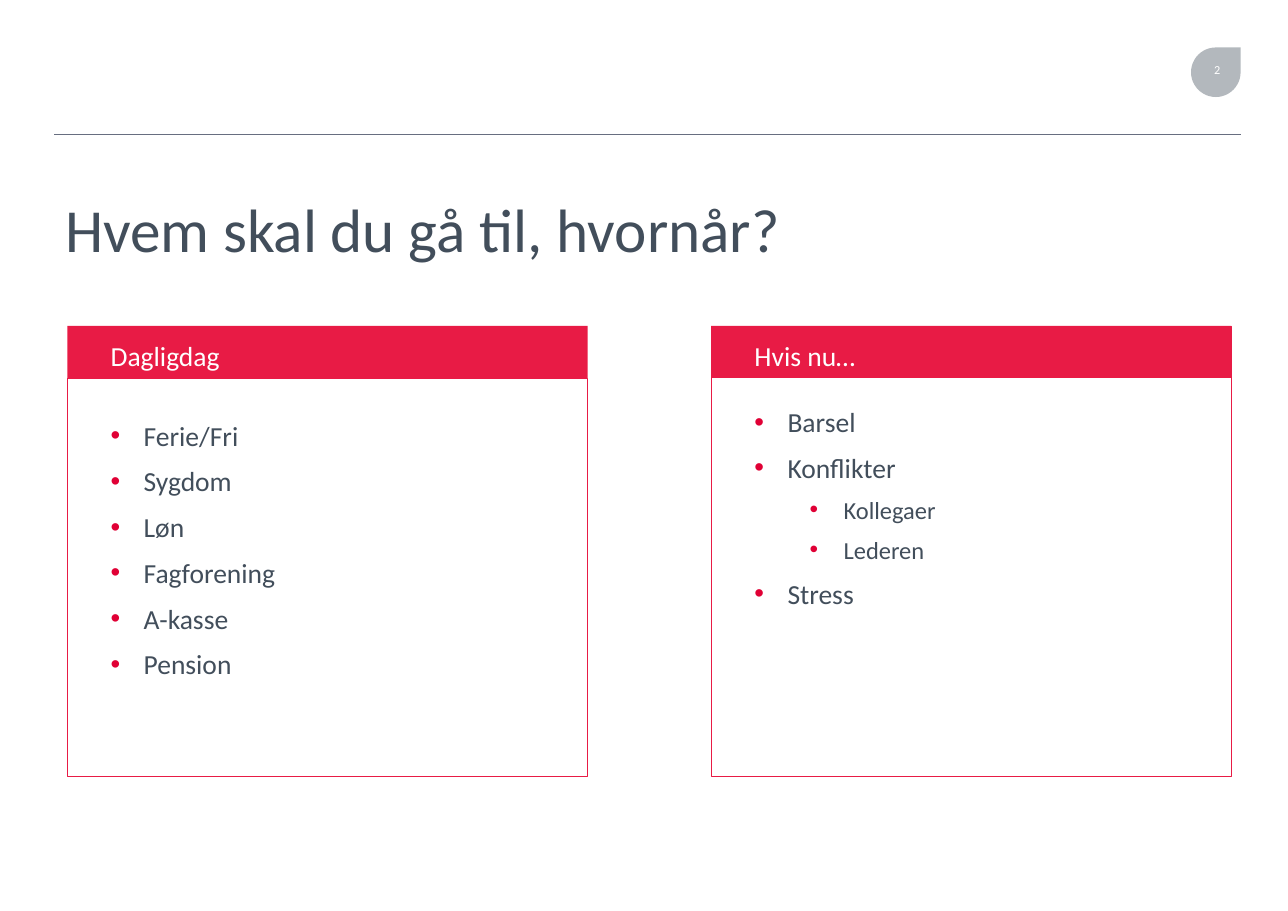
import pptx
import pptx.util
import pptx.dml.color
import pptx.enum.shapes
import pptx.enum.text
import pptx.oxml
import pptx.oxml.ns
from lxml import etree

Pt = pptx.util.Pt
Align = pptx.enum.text.PP_ALIGN
Anchor = pptx.enum.text.MSO_ANCHOR
qn = pptx.oxml.ns.qn

COLORS = {
    "text": "424E5B",
    "white": "FFFFFF",
    "red": "E81B45",
    "bullet": "E00035",
    "rule": "676E80",
}
LEVELS = [
    {"size": 18, "before": 4, "left": 21.6, "hang": -23.76},
    {"size": 16, "before": 3.2, "left": 58.3, "hang": -22.3},
]
COLUMNS = [
    {
        "left": 44, "top": 247, "inset": 22.3, "header": "Dagligdag",
        "items": [("Ferie/Fri", 0), ("Sygdom", 0), ("Løn", 0),
                  ("Fagforening", 0), ("A-kasse", 0), ("Pension", 0)],
    },
    {
        "left": 464.75, "top": 213, "inset": 47.5, "header": "Hvis nu…",
        "items": [("Barsel", 0), ("Konflikter", 0), ("Kollegaer", 1),
                  ("Lederen", 1), ("Stress", 0)],
    },
]
COLUMN_WIDTH, HEADER_TOP, HEADER_HEIGHT, BODY_BOTTOM = 340, 213, 34, 507.6


def rgb(name):
    return pptx.dml.color.RGBColor.from_string(COLORS[name])


def write(p, text, size=18, color="text", align=Align.LEFT, spacing=1.2, before=0):
    p.alignment = align
    p.line_spacing = spacing
    p.space_before = Pt(before)
    r = p.add_run()
    r.text = text
    r.font.name = "Calibri"
    r.font.size = Pt(size)
    r.font.bold = False
    r.font.color.rgb = rgb(color)


class Deck:
    def __init__(self, width, height):
        self.prs = pptx.Presentation()
        self.prs.slide_width, self.prs.slide_height = Pt(width), Pt(height)
        self.s = self.prs.slides.add_slide(self.prs.slide_layouts.get_by_name("Comparison"))

    def frame(self, sp, insets, anchor=Anchor.TOP):
        tf = sp.text_frame
        tf.word_wrap = True
        tf.auto_size = pptx.enum.text.MSO_AUTO_SIZE.NONE
        tf.vertical_anchor = anchor
        x, y = insets
        tf.margin_left = tf.margin_right = Pt(x)
        tf.margin_top = tf.margin_bottom = Pt(y)
        return tf

    def place(self, idx, left, top, width, height):
        sp = self.s.placeholders[idx]
        sp.left, sp.top, sp.width, sp.height = map(Pt, (left, top, width, height))
        return sp

    def title(self, text, *box):
        tf = self.frame(self.place(0, *box), (7.2, 3.6))
        write(tf.paragraphs[0], text, size=40, spacing=1.0)

    def header(self, idx, text, *box):
        sp = self.place(idx, *box)
        sp.fill.solid()
        sp.fill.fore_color.rgb = rgb("red")
        tf = self.frame(sp, (28.3, 2.9), Anchor.MIDDLE)
        write(tf.paragraphs[0], text, color="white")

    def bullet(self, p, level):
        p.level = level
        pPr = p._p.get_or_add_pPr()
        pPr.set("marL", str(Pt(LEVELS[level]["left"])))
        pPr.set("indent", str(Pt(LEVELS[level]["hang"])))
        clr = etree.SubElement(pPr, qn("a:buClr"))
        etree.SubElement(clr, qn("a:srgbClr"), val=COLORS["bullet"])
        etree.SubElement(pPr, qn("a:buFont"), typeface="Arial")
        etree.SubElement(pPr, qn("a:buChar"), char="•")

    def bullets(self, idx, items, inset, *box):
        sp = self.place(idx, *box)
        sp.line.color.rgb = rgb("red")
        sp.line.width = Pt(0.25)
        tf = self.frame(sp, (28.3, inset))
        for i, (text, level) in enumerate(items):
            p = tf.add_paragraph() if i else tf.paragraphs[0]
            self.bullet(p, level)
            before = LEVELS[level]["before"] if i else 0
            write(p, text, size=LEVELS[level]["size"], before=before)

    def teardrop(self, alpha, *box):
        kind = pptx.enum.shapes.MSO_SHAPE.TEAR
        sp = self.s.shapes.add_shape(kind, *map(Pt, box))
        sp.shadow.inherit = False
        sp.fill.solid()
        sp.fill.fore_color.rgb = rgb("text")
        clr = sp._element.spPr.find(".//" + qn("a:srgbClr"))
        etree.SubElement(clr, qn("a:alpha"), val=str(alpha * 1000))
        sp.line.fill.background()

    def label(self, text, *box):
        sp = self.s.shapes.add_textbox(*map(Pt, box))
        tf = self.frame(sp, (0, 0))
        write(tf.paragraphs[0], text, size=8, color="white",
              align=Align.CENTER, spacing=0.5)

    def rule(self, x1, x2, y):
        kind = pptx.enum.shapes.MSO_CONNECTOR.STRAIGHT
        sp = self.s.shapes.add_connector(kind, Pt(x1), Pt(y), Pt(x2), Pt(y))
        sp.line.color.rgb = rgb("rule")
        sp.line.width = Pt(0.25)
        etree.SubElement(sp._element.spPr, qn("a:effectLst"))


def main():
    deck = Deck(841.68, 595.44)
    deck.teardrop(40, 778.3, 31, 32.4, 32.4)
    deck.label("2", 786.2, 44.6, 18.7, 11.5)
    deck.rule(35.3, 810.7, 87.8)
    deck.title("Hvem skal du gå til, hvornår?", 35.3, 121.7, 771, 68.4)
    for i, column in enumerate(COLUMNS):
        left, top = column["left"], column["top"]
        deck.header(2 * i + 1, column["header"],
                    left, HEADER_TOP, COLUMN_WIDTH, HEADER_HEIGHT)
        deck.bullets(2 * i + 2, column["items"], column["inset"],
                     left, top, COLUMN_WIDTH, BODY_BOTTOM - top)
    deck.prs.save("out.pptx")


if __name__ == "__main__":
    main()
